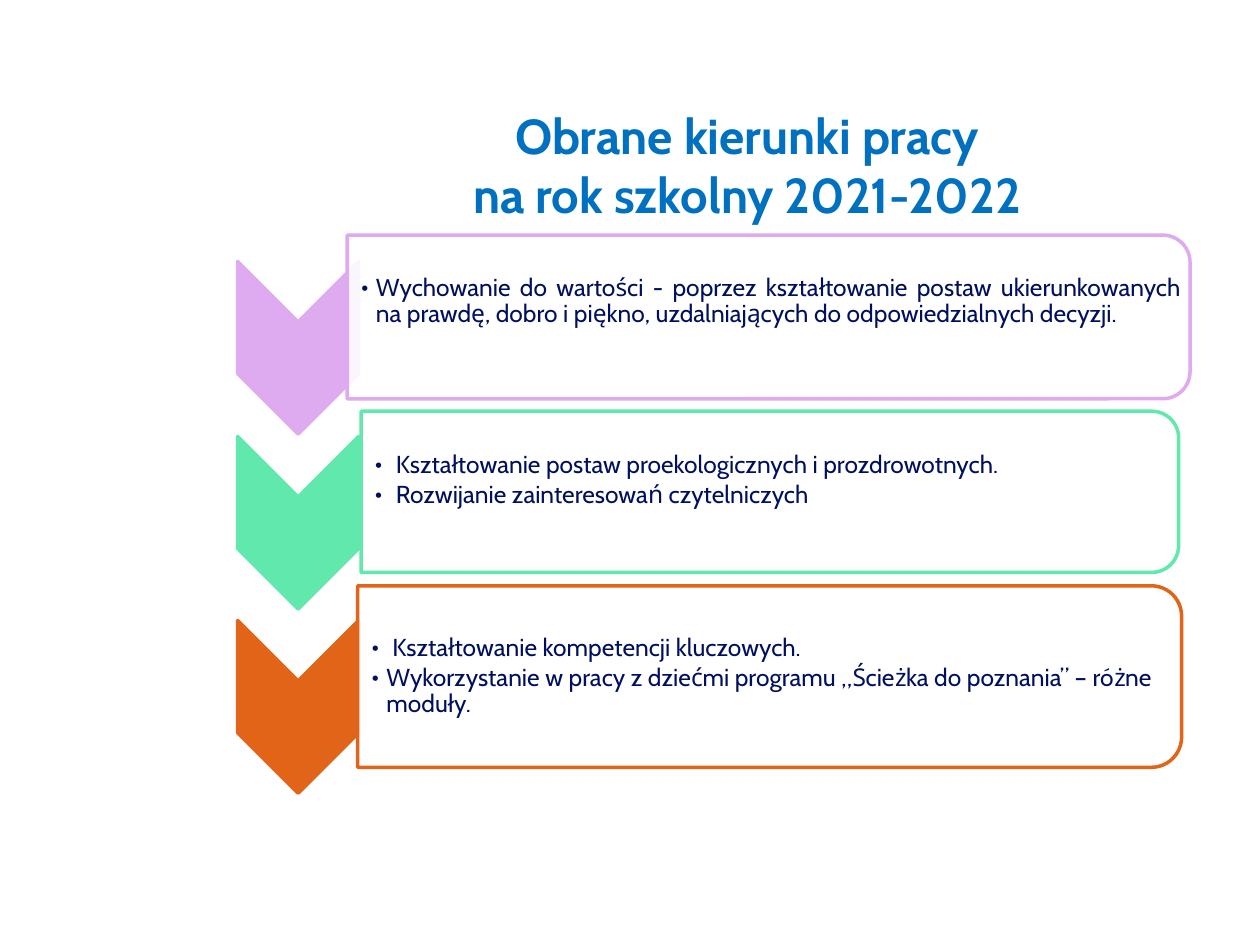
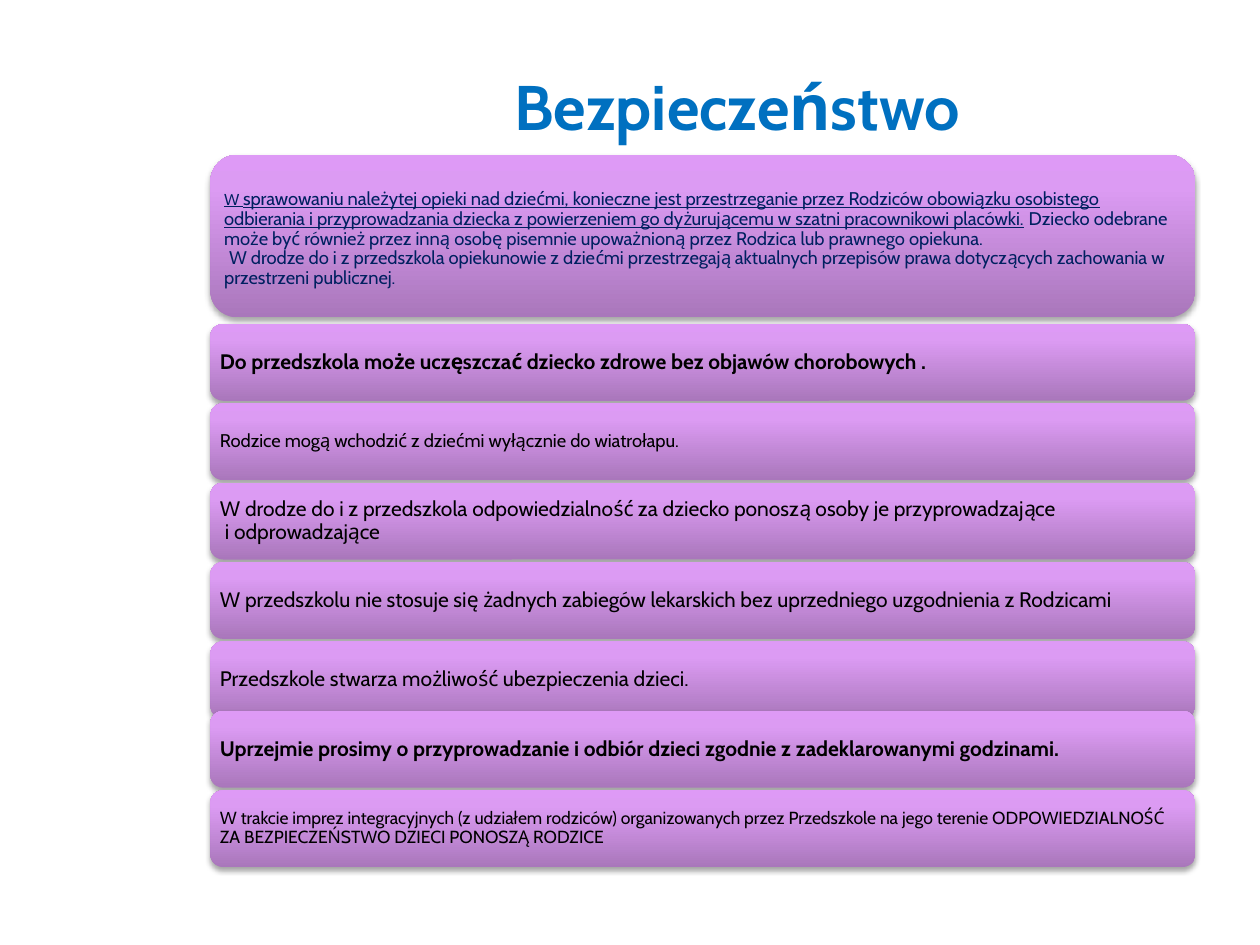
from copy import deepcopy
from dataclasses import dataclass

from lxml import etree
from pptx import Presentation
from pptx import util as u
from pptx.dml.color import RGBColor
from pptx.enum import shapes, text
from pptx.oxml.ns import qn


@dataclass(frozen=True)
class Theme:
    font: str = "Cabin"
    title: str = "0070C0"
    navy: str = "00105E"
    deep_blue: str = "002060"
    black: str = "000000"
    white: str = "FFFFFF"
    violet: str = "DEAAF0"
    mint: str = "61E9AD"
    orange: str = "E26418"
    gradient: tuple = ((0, "A977BB"), (0.8, "DC9BF3"), (1, "DE9AF6"))
    title_size: float = 28
    large_title_size: float = 36
    panel_size: float = 14
    rule_size: float = 12
    small_size: float = 10.5
    note_size: float = 10
    initial_size: float = 9


theme = Theme()


def add_run(paragraph, words, size, color, bold=False, underline=False):
    run = paragraph.add_run()
    run.text = words
    run.font.name = theme.font
    run.font.size = u.Pt(size)
    run.font.bold = bold
    run.font.underline = underline
    run.font.color.rgb = RGBColor.from_string(color)


def add_titled_slide(lines, size, left, top):
    slide = presentation.slides.add_slide(presentation.slide_layouts[5])
    title = slide.shapes.title
    title.left, title.top = u.Cm(left), u.Cm(top)
    title.width, title.height = u.Cm(20.32), u.Cm(1.98)
    frame = title.text_frame
    frame.auto_size = text.MSO_AUTO_SIZE.NONE
    frame.vertical_anchor = text.MSO_ANCHOR.MIDDLE
    paragraph = frame.paragraphs[0]
    paragraph.alignment = text.PP_ALIGN.CENTER
    for index, line in enumerate(lines):
        if index:
            paragraph.add_line_break()
        add_run(paragraph, line, size, theme.title, bold=True)
    return slide


presentation = Presentation()
presentation.slide_width = u.Cm(25.4)
presentation.slide_height = u.Cm(19.05)

slide = add_titled_slide(
    ["Obrane kierunki pracy", "na rok szkolny 2021-2022"], theme.title_size, 4.9, 2.32)

directions = [
    (theme.violet, 5.79, 7.0, 4.74, 16.99, 3.3, 0.63, [
        (0.3, "Wychowanie do wartości - poprzez kształtowanie postaw ukierunkowanych "
              "na prawdę, dobro i piękno, uzdalniających do odpowiedzialnych decyzji.")]),
    (theme.mint, 9.32, 7.28, 8.29, 16.48, 3.25, 0.45, [
        (0.42, "Kształtowanie postaw proekologicznych i prozdrowotnych."),
        (0.42, "Rozwijanie zainteresowań czytelniczych")]),
    (theme.orange, 13.03, 7.21, 11.81, 16.61, 3.66, 0, [
        (0.42, "Kształtowanie kompetencji kluczowych."),
        (0.3, "Wykorzystanie w pracy z dziećmi programu „Ścieżka do poznania” – różne moduły.")]),
]
for color, chevron_top, left, top, width, height, bottom_inset, bullets in directions:
    chevron = slide.shapes.add_shape(
        shapes.MSO_SHAPE.CHEVRON, u.Cm(4.27), u.Cm(chevron_top), u.Cm(3.48), u.Cm(2.44))
    panel = slide.shapes.add_shape(
        shapes.MSO_SHAPE.ROUND_2_SAME_RECTANGLE,
        u.Cm(left + (width - height) / 2), u.Cm(top + (height - width) / 2),
        u.Cm(height), u.Cm(width))
    for shape, fill in ((chevron, color), (panel, theme.white)):
        shape.rotation = 90
        shape.shadow.inherit = False
        shape.fill.solid()
        shape.fill.fore_color.rgb = RGBColor.from_string(fill)
        shape.line.color.rgb = RGBColor.from_string(color)
        shape.line.width = u.Pt(2)
    panel_color = panel._element.spPr.find(qn("a:solidFill"))[0]
    etree.SubElement(panel_color, qn("a:alpha"), val="90000")

    box = slide.shapes.add_textbox(u.Cm(left), u.Cm(top), u.Cm(width), u.Cm(height))
    frame = box.text_frame
    frame.word_wrap = True
    frame.vertical_anchor = text.MSO_ANCHOR.MIDDLE
    frame.margin_left, frame.margin_right = u.Cm(0.28), u.Cm(0.18)
    frame.margin_top, frame.margin_bottom = 0, u.Cm(bottom_inset)
    for index, (hanging, words) in enumerate(bullets):
        paragraph = frame.add_paragraph() if index else frame.paragraphs[0]
        properties = paragraph._p.get_or_add_pPr()
        properties.set("marL", str(u.Cm(hanging)))
        properties.set("indent", str(-u.Cm(hanging)))
        etree.SubElement(properties, qn("a:buFont"), typeface=theme.font)
        etree.SubElement(properties, qn("a:buChar"), char="•")
        paragraph.alignment = (
            text.PP_ALIGN.JUSTIFY if color == theme.violet else text.PP_ALIGN.LEFT)
        paragraph.line_spacing = 0.9
        paragraph.space_after = u.Pt(2)
        add_run(paragraph, words, theme.panel_size, theme.navy)

slide = add_titled_slide(["Bezpieczeństwo"], theme.large_title_size, 4.7, 1.14)

first_top, first_height = 3.12, 3.28
row_top, row_pitch, row_height = 6.53, 1.6, 1.55
small, normal = (theme.small_size, theme.black), (theme.rule_size, theme.black)
intro = (theme.small_size, theme.deep_blue)
rules = [
    [[("W ", theme.initial_size, theme.deep_blue, False, True),
      ("sprawowaniu należytej opieki nad dziećmi, konieczne jest przestrzeganie przez "
       "Rodziców obowiązku osobistego odbierania i przyprowadzania dziecka z powierzeniem "
       "go dyżurującemu w szatni pracownikowi placówki.", *intro, False, True),
      (" Dziecko odebrane może być również przez inną osobę pisemnie upoważnioną przez "
       "Rodzica lub prawnego opiekuna.", *intro)],
     [("W drodze do i z przedszkola opiekunowie z dziećmi przestrzegają aktualnych "
       "przepisów prawa dotyczących zachowania w przestrzeni publicznej.", *intro)]],
    [[("Do przedszkola może uczęszczać dziecko zdrowe bez objawów chorobowych .",
       *normal, True)]],
    [[("Rodzice mogą wchodzić z dziećmi wyłącznie do wiatrołapu.", *small)]],
    [[("W drodze do i z przedszkola odpowiedzialność za dziecko ponoszą osoby je "
       "przyprowadzające", *normal)],
     [("i odprowadzające", *normal)]],
    [[("W przedszkolu nie stosuje się żadnych zabiegów lekarskich bez uprzedniego "
       "uzgodnienia z Rodzicami", *normal)]],
    [[("Przedszkole stwarza możliwość ubezpieczenia dzieci.", *normal)]],
    [[("Uprzejmie prosimy o przyprowadzanie i odbiór dzieci zgodnie z zadeklarowanymi "
       "godzinami.", *normal, True)]],
    [[("W trakcie imprez integracyjnych (z udziałem rodziców) organizowanych przez "
       "Przedszkole na jego terenie ODPOWIEDZIALNOŚĆ ZA BEZPIECZEŃSTWO DZIECI PONOSZĄ "
       "RODZICE", theme.note_size, theme.black)]],
]
for row, paragraphs in enumerate(rules):
    top, height = row_top + (row - 1) * row_pitch, row_height
    if row == 0:
        top, height = first_top, first_height
    elif row >= 6:
        top -= 0.2
    bar = slide.shapes.add_shape(
        shapes.MSO_SHAPE.ROUNDED_RECTANGLE, u.Cm(4.24), u.Cm(top), u.Cm(19.86), u.Cm(height))
    bar.line.fill.background()
    bar.fill.gradient()
    bar.fill.gradient_angle = 90
    properties = bar._element.spPr
    stops = properties.find(qn("a:gradFill")).find(qn("a:gsLst"))
    stops.append(deepcopy(stops[0]))
    for stop, (position, color) in zip(bar.fill.gradient_stops, theme.gradient):
        stop.position = position
        stop.color.rgb = RGBColor.from_string(color)
    bar.shadow.inherit = False
    shadow = etree.SubElement(
        properties.find(qn("a:effectLst")), qn("a:outerShdw"), blurRad=str(u.Pt(3.1)),
        dist=str(u.Pt(1.8)), dir="5400000", rotWithShape="0")
    shadow_color = etree.SubElement(shadow, qn("a:srgbClr"), val=theme.black)
    etree.SubElement(shadow_color, qn("a:alpha"), val="35000")

    frame = bar.text_frame
    frame.word_wrap = True
    frame.vertical_anchor = text.MSO_ANCHOR.MIDDLE
    frame.margin_left = frame.margin_right = u.Cm(0.12)
    frame.margin_top = u.Cm(0.24 if row == 0 else 0.12)
    frame.margin_bottom = u.Cm(0.12)
    for index, runs in enumerate(paragraphs):
        paragraph = frame.add_paragraph() if index else frame.paragraphs[0]
        paragraph.alignment = text.PP_ALIGN.LEFT
        paragraph.line_spacing = 0.9
        if index:
            paragraph._p.get_or_add_pPr().set("indent", str(u.Cm(0.1)))
        for run in runs:
            add_run(paragraph, *run)

presentation.save("out.pptx")
